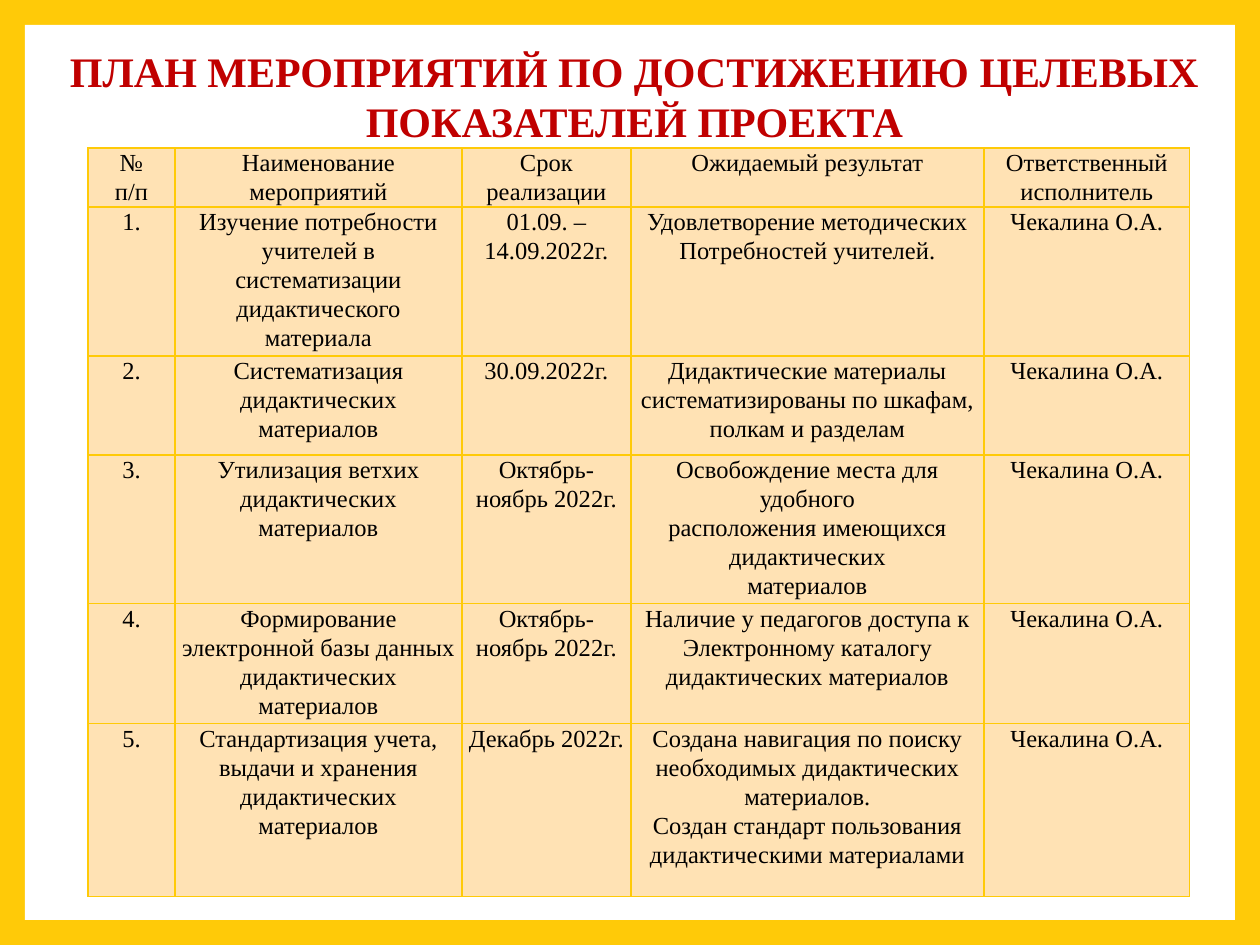
import pptx
import pptx.util
import pptx.dml.color
import pptx.enum.shapes
import pptx.enum.text
import pptx.oxml.ns
from lxml import etree

TITLE = "ПЛАН МЕРОПРИЯТИЙ ПО ДОСТИЖЕНИЮ ЦЕЛЕВЫХ ПОКАЗАТЕЛЕЙ ПРОЕКТА"
PERSON = "Чекалина О.А."
AUTUMN = "Октябрь-ноябрь 2022г."
HEADER = ("№\nп/п", "Наименование мероприятий", "Срок реализации",
          "Ожидаемый результат", "Ответственный\nисполнитель")
ACTIVITIES = [
    ("Изучение потребности учителей в систематизации дидактического материала",
     "01.09. – 14.09.2022г.",
     "Удовлетворение методических\nПотребностей учителей."),
    ("Систематизация\nдидактических материалов",
     "30.09.2022г.",
     "Дидактические материалы\nсистематизированы по шкафам, полкам и разделам"),
    ("Утилизация ветхих\nдидактических материалов",
     AUTUMN,
     "Освобождение места для удобного\nрасположения имеющихся дидактических\nматериалов"),
    ("Формирование электронной базы данных дидактических материалов",
     AUTUMN,
     "Наличие у педагогов доступа к\nЭлектронному каталогу дидактических материалов"),
    ("Стандартизация учета,\nвыдачи и хранения\nдидактических материалов",
     "Декабрь 2022г.",
     "Создана навигация по поиску\nнеобходимых дидактических материалов.\n"
     "Создан стандарт пользования\nдидактическими материалами"),
]
COLUMN_WIDTHS = (87, 287, 169, 353, 206)
ROW_HEIGHTS = (59, 149, 99, 149, 120, 173)
SLIDE_SIZE = (1260, 945)
FRAME_WIDTH = 25
TITLE_BOX = (39, 39, 1191, 134)
TABLE_CORNER = (88, 148)

THEME = {
    "font": "Times New Roman",
    "frame": "FFCA08",
    "paper": "FFFFFF",
    "cell": "FFE2B4",
    "title": {"color": "C00000", "size": 24, "bold": True},
    "body": {"color": "000000", "size": 14, "bold": False},
    "border": 0.79,
}


def px(length):
    return pptx.util.Emu(round(length * 914400 / 126))


def rgb(code):
    return pptx.dml.color.RGBColor.from_string(code)


def apply(target, values):
    for name, value in values.items():
        setattr(target, name, value)


def paint(fill, code):
    fill.solid()
    fill.fore_color.rgb = rgb(code)


def write(frame, text, style, spacing):
    frame.text = text
    for para in frame.paragraphs:
        apply(para, {"alignment": pptx.enum.text.PP_ALIGN.CENTER, "line_spacing": spacing,
                     "space_before": pptx.util.Pt(0), "space_after": pptx.util.Pt(0)})
        for span in para.runs:
            apply(span.font, {"name": THEME["font"], "size": pptx.util.Pt(style["size"]),
                              "bold": style["bold"]})
            span.font.color.rgb = rgb(style["color"])


def add_borders(cell):
    qn = pptx.oxml.ns.qn
    properties = cell._tc.get_or_add_tcPr()
    for side in ("lnL", "lnR", "lnT", "lnB"):
        line = etree.SubElement(properties, qn("a:" + side), w=str(pptx.util.Pt(THEME["border"])))
        fill = etree.SubElement(line, qn("a:solidFill"))
        etree.SubElement(fill, qn("a:srgbClr"), val=THEME["frame"])


def add_paper(page):
    width, height = (px(side - 2 * FRAME_WIDTH) for side in SLIDE_SIZE)
    paper = page.shapes.add_shape(pptx.enum.shapes.MSO_SHAPE.RECTANGLE,
                                  px(FRAME_WIDTH), px(FRAME_WIDTH), width, height)
    paper.shadow.inherit = False
    paint(paper.fill, THEME["paper"])
    paper.line.fill.background()
    page.shapes.title._element.addprevious(paper._element)


def add_title(page):
    title = page.shapes.title
    apply(title, dict(zip(("left", "top", "width", "height"), map(px, TITLE_BOX))))
    apply(title.text_frame, {"word_wrap": True,
                             "auto_size": pptx.enum.text.MSO_AUTO_SIZE.NONE,
                             "vertical_anchor": pptx.enum.text.MSO_ANCHOR.TOP})
    write(title.text_frame, TITLE, THEME["title"], 1.0)


def add_plan(page):
    rows = [HEADER] + [(f"{number}.", *activity, PERSON)
                       for number, activity in enumerate(ACTIVITIES, 1)]
    table = page.shapes.add_table(len(rows), len(HEADER), *map(px, TABLE_CORNER),
                                  px(sum(COLUMN_WIDTHS)), px(sum(ROW_HEIGHTS))).table
    for column, width in zip(table.columns, COLUMN_WIDTHS):
        column.width = px(width)
    for row, height, texts in zip(table.rows, ROW_HEIGHTS, rows):
        row.height = px(height)
        for cell, text in zip(row.cells, texts):
            apply(cell, {"margin_left": px(5), "margin_right": px(5),
                         "margin_top": 0, "margin_bottom": 0})
            write(cell.text_frame, text, THEME["body"], 1.07)
            add_borders(cell)
            paint(cell.fill, THEME["cell"])


def main():
    deck = pptx.Presentation()
    deck.slide_width, deck.slide_height = map(px, SLIDE_SIZE)
    page = deck.slides.add_slide(deck.slide_layouts.get_by_name("Title Only"))
    paint(page.background.fill, THEME["frame"])
    add_paper(page)
    add_title(page)
    add_plan(page)
    deck.save("out.pptx")


if __name__ == "__main__":
    main()
